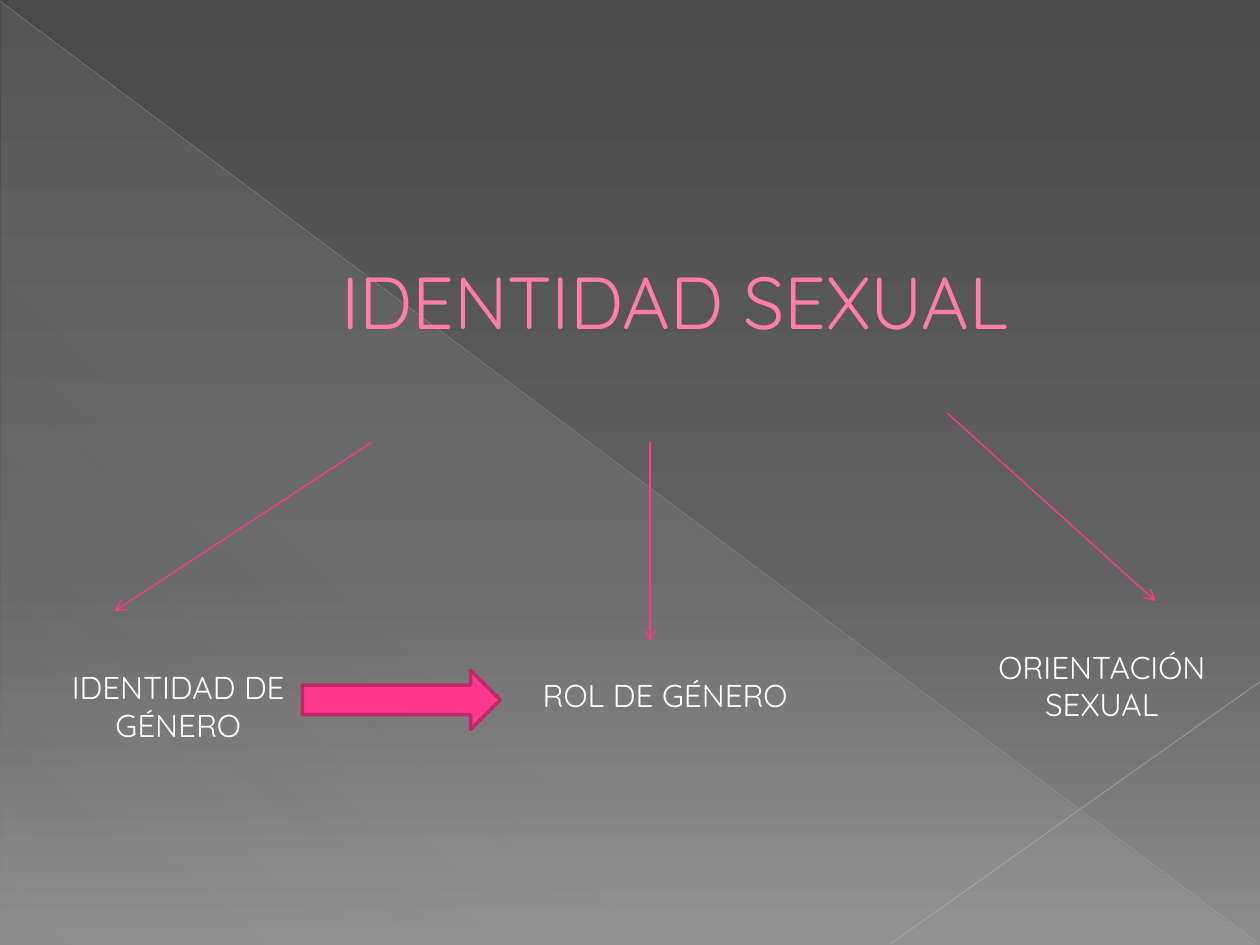
from lxml import etree
from pptx import Presentation
from pptx import util as u
from pptx.dml.color import RGBColor
from pptx.enum import shapes, text
from pptx.oxml.ns import qn

PINK = "FF388C"


def rgb(code):
    return RGBColor.from_string(code)


def tint(parent, code, alpha=100):
    """Add a colour, in percent opaque, to an XML parent."""
    color = etree.SubElement(parent, qn("a:srgbClr"), val=code)
    if alpha < 100:
        etree.SubElement(color, qn("a:alpha"), val=str(alpha * 1000))


def blend(fill, owner, stops, angle):
    """Give a fill a linear gradient of (position, colour, opacity) stops."""
    fill.gradient()
    grad = owner.element.find(".//" + qn("a:gradFill"))
    grad.find(qn("a:lin")).set("ang", str(angle * 60000))
    group = grad.find(qn("a:gsLst"))
    for old in list(group):
        group.remove(old)
    for place, code, alpha in stops:
        stop = etree.SubElement(group, qn("a:gs"), pos=str(place * 1000))
        tint(stop, code, alpha)


class Deck:
    font = "Quicksand"

    def __init__(self):
        self.prs = Presentation()
        self.prs.slide_width = u.Inches(10)
        self.prs.slide_height = u.Inches(7.5)
        self.slide = self.prs.slides.add_slide(self.prs.slide_layouts[5])

    def backdrop(self, stops, angle):
        blend(self.slide.background.fill, self.slide, stops, angle)

    def shape(self, kind, box):
        item = self.slide.shapes.add_shape(kind, *map(u.Inches, box))
        item.shadow.inherit = False
        return item

    def wedge(self, box, stops, angle):
        item = self.shape(shapes.MSO_SHAPE.RIGHT_TRIANGLE, box)
        item.line.fill.background()
        blend(item.fill, item, stops, angle)

    def block(self, box, fill, edge, width):
        item = self.shape(shapes.MSO_SHAPE.RIGHT_ARROW, box)
        item.fill.solid()
        item.fill.fore_color.rgb = rgb(fill)
        item.line.color.rgb = rgb(edge)
        item.line.width = u.Pt(width)

    def line(self, start, end, code, width, alpha=100, arrow=False):
        item = self.slide.shapes.add_connector(
            shapes.MSO_CONNECTOR.STRAIGHT, *map(u.Inches, start + end))
        item.line.width = u.Pt(width)
        item.line.color.rgb = rgb(code)
        props = item.element.spPr
        edge = props.find(qn("a:ln"))
        if alpha < 100:
            solid = edge.find(qn("a:solidFill"))
            solid.clear()
            tint(solid, code, alpha)
        if arrow:
            etree.SubElement(edge, qn("a:tailEnd"), type="arrow")
        etree.SubElement(props, qn("a:effectLst"))

    def letter(self, item, words, size, code):
        """Put one centred, styled paragraph in a shape."""
        frame = item.text_frame
        frame.word_wrap = True
        para = frame.paragraphs[0]
        para.text = words
        para.alignment = text.PP_ALIGN.CENTER
        para.font.name = self.font
        para.font.size = u.Pt(size)
        para.font.color.rgb = rgb(code)
        return para

    def title(self, box, words, size, code, edge, indent):
        item = self.slide.shapes.title
        item.left, item.top, item.width, item.height = map(u.Inches, box)
        para = self.letter(item, words, size, code)
        item.text_frame.auto_size = text.MSO_AUTO_SIZE.NONE
        item.text_frame.vertical_anchor = text.MSO_ANCHOR.MIDDLE
        para._p.get_or_add_pPr().set("marL", str(u.Inches(indent)))
        props = para.runs[0].font._element
        line = etree.Element(qn("a:ln"), w=str(u.Pt(0.5)))
        tint(etree.SubElement(line, qn("a:solidFill")), edge)
        props.insert(0, line)
        # The title stands in front of the backdrop shapes.
        self.slide.shapes.element.append(item.element)

    def label(self, box, words):
        item = self.slide.shapes.add_textbox(*map(u.Inches, box))
        self.letter(item, words, 18, "FFFFFF")
        item.text_frame.auto_size = text.MSO_AUTO_SIZE.SHAPE_TO_FIT_TEXT


def main():
    deck = Deck()
    deck.backdrop([(0, "4A4A4A", 100), (60, "626262", 100),
                   (100, "8C8C8C", 100)], 90)
    deck.wedge((0.01, 0.02, 9.98, 7.48),
               [(0, "D2D2D2", 10), (70, "D2D2D2", 8), (100, "D2D2D2", 1)], 133)
    deck.line((0, 0.01), (9.99, 7.49), "BFBFBF", 0.39, alpha=35)
    deck.line((10, 5.41), (7.07, 7.49), "C6C6C6", 0.47, alpha=45)
    deck.title((0.59, 1.62, 9, 1.53), "IDENTIDAD SEXUAL", 42,
               "FF7DA7", "B12761", 0.53)
    for start, end in (((2.95, 3.51), (0.91, 4.85)),
                       ((5.16, 3.51), (5.16, 5.09)),
                       ((7.52, 3.28), (9.17, 4.77))):
        deck.line(start, end, PINK, 0.75, arrow=True)
    for box, words in (((0.35, 5.25, 2.13, 0.71), "IDENTIDAD DE GÉNERO"),
                       ((4.06, 5.32, 2.44, 0.4), "ROL DE GÉNERO"),
                       ((7.68, 5.09, 2.13, 0.71), "ORIENTACIÓN SEXUAL")):
        deck.label(box, words)
    deck.block((2.4, 5.32, 1.57, 0.47), PINK, "BD2968", 2)
    deck.prs.save("out.pptx")


if __name__ == "__main__":
    main()
